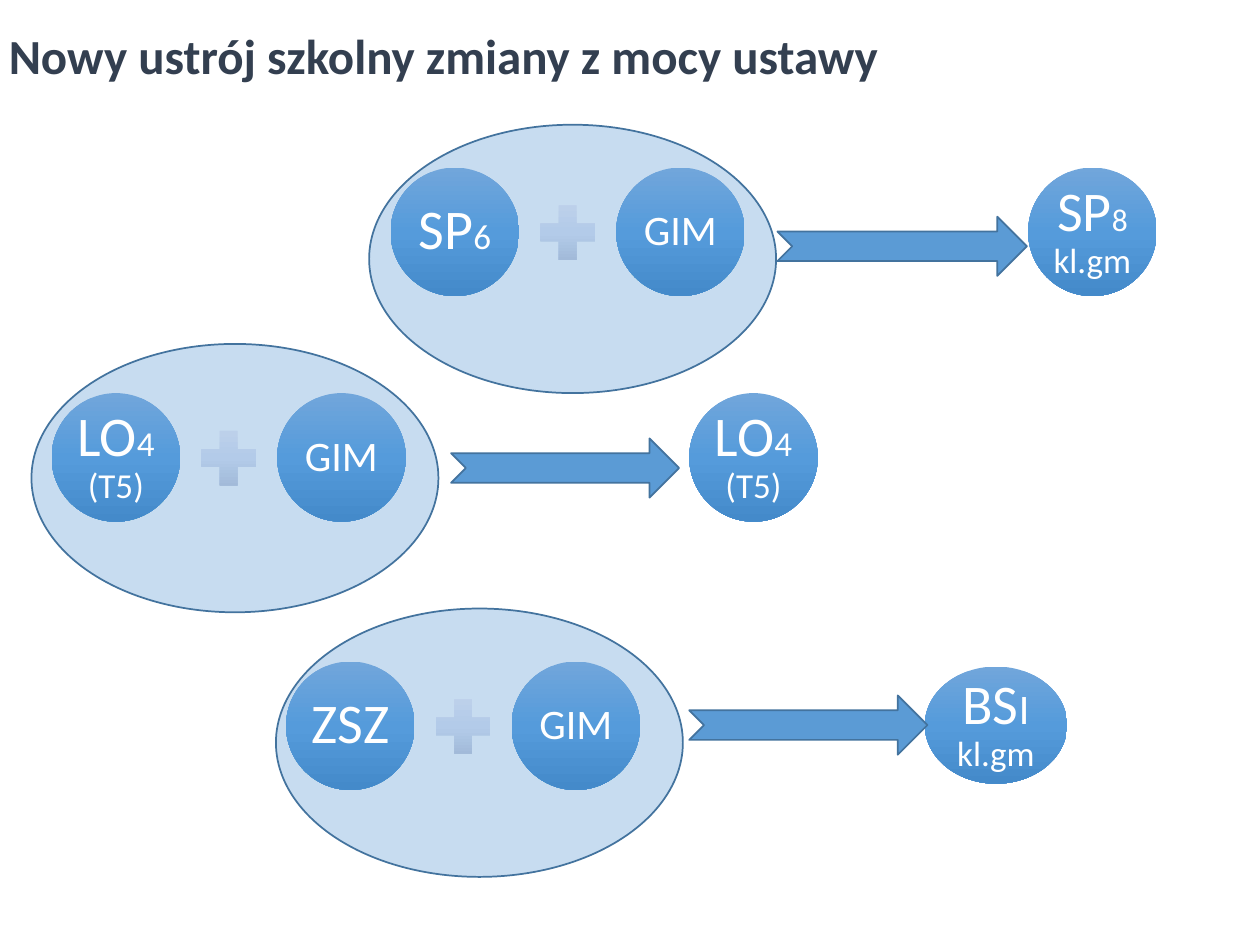
from typing import NamedTuple

from lxml.etree import SubElement
from pptx import Presentation
from pptx.dml.color import RGBColor
from pptx.enum.shapes import MSO_SHAPE as Kind
from pptx.enum.text import MSO_ANCHOR as Anchor, PP_ALIGN as Align
from pptx.oxml import parse_xml
from pptx.oxml.ns import nsdecls, qn
from pptx.util import Inches, Pt

FONT = "Calibri"
BLUE, EDGE, WHITE, NAVY = "5B9BD5", "43739E", "FFFFFF", "333F50"
BALL = ("71A6DB", "559BDB", "448ACA")
PALE = ("C0D2EB", "B3CBE9", "9BB4D3")
SIDE = 1.02  # diameter of a school circle


class Box(NamedTuple):
    x: float
    y: float
    w: float
    h: float


class Run(NamedTuple):
    text: str
    size: int


class Merger(NamedTuple):
    ring: Box
    school: Box
    name: list[Run]
    arrow: Box
    goal: Box
    result: list[Run]


def color(code: str) -> RGBColor:
    return RGBColor.from_string(code)


def add_shape(kind: Kind, box: Box):
    shape = slide.shapes.add_shape(kind, *map(Inches, box))
    shape.shadow.inherit = False
    return shape


def add_solid(kind: Kind, box: Box, alpha: int = 100) -> None:
    shape = add_shape(kind, box)
    shape.fill.solid()
    shape.fill.fore_color.rgb = color(BLUE)
    if alpha < 100:
        tint = shape.fill._xPr.find(qn("a:solidFill"))[0]
        SubElement(tint, qn("a:alpha"), val=str(alpha * 1000))
    shape.line.color.rgb = color(EDGE)
    shape.line.width = Pt(1)


def add_shaded(kind: Kind, box: Box, shades: tuple[str, str, str]):
    """Add a borderless shape that is shaded from top to bottom."""
    shape = add_shape(kind, box)
    stops = "".join(
        f'<a:gs pos="{i * 50000}"><a:srgbClr val="{code}"/></a:gs>'
        for i, code in enumerate(shades)
    )
    shape._element.spPr.find(qn("a:prstGeom")).addnext(parse_xml(
        f'<a:gradFill {nsdecls("a")}><a:gsLst>{stops}</a:gsLst>'
        '<a:lin ang="5400000" scaled="0"/></a:gradFill>'
    ))
    shape.line.fill.background()
    return shape


def set_frame(frame, side: float, top: float) -> None:
    frame.word_wrap = True
    frame.vertical_anchor = Anchor.MIDDLE
    frame.margin_left = frame.margin_right = Inches(side)
    frame.margin_top = frame.margin_bottom = Inches(top)


def add_ball(box: Box, runs: list[Run]) -> None:
    frame = add_shaded(Kind.OVAL, box, BALL).text_frame
    set_frame(frame, 0, 0)
    para = frame.paragraphs[0]
    para.alignment = Align.CENTER
    para.line_spacing = 0.9
    para.font.name = FONT
    para.font.color.rgb = color(WHITE)
    for text, size in runs:
        # A trailing newline marks a line break
        run = para.add_run()
        run.text = text.rstrip("\n")
        run.font.size = Pt(size)
        run.font.name = FONT
        run.font.color.rgb = color(WHITE)
        if text.endswith("\n"):
            para.add_line_break()


def add_merger(item: Merger) -> None:
    x, y, w, h = item.school
    add_solid(Kind.OVAL, item.ring, alpha=34)
    add_ball(item.school, item.name)
    add_shaded(Kind.MATH_PLUS, Box(x + 1.11, y + 0.22, 0.59, 0.59), PALE)
    add_ball(Box(x + 1.79, y, w, h), [Run("GIM", 24)])
    add_ball(item.goal, item.result)
    add_solid(Kind.NOTCHED_RIGHT_ARROW, item.arrow)


def add_title(text: str) -> None:
    frame = slide.shapes.add_textbox(*map(Inches, (0, -0.03, 10, 0.99))).text_frame
    set_frame(frame, 0.07, 0.03)
    para = frame.paragraphs[0]
    para.text = text
    para.line_spacing = 0.9
    para.font.name = FONT
    para.font.size = Pt(28)
    para.font.bold = True
    para.font.color.rgb = color(NAVY)


LYCEUM = [Run("LO", 32), Run("4 (T5)", 20)]
MERGERS = [
    # Vocational school
    Merger(
        Box(2.19, 4.83, 3.23, 2.13), Box(2.27, 5.25, SIDE, SIDE), [Run("ZSZ", 32)],
        Box(5.47, 5.52, 1.89, 0.47), Box(7.34, 5.29, 1.13, 0.93),
        [Run("BS", 32), Run("I\n", 24), Run("kl.gm", 20)],
    ),
    # Secondary school
    Merger(
        Box(0.25, 2.73, 3.23, 2.13), Box(0.41, 3.12, SIDE, SIDE), LYCEUM,
        Box(3.58, 3.48, 1.81, 0.47), Box(5.47, 3.12, SIDE, SIDE), LYCEUM,
    ),
    # Primary school
    Merger(
        Box(2.93, 0.99, 3.23, 2.13), Box(3.1, 1.33, SIDE, SIDE),
        [Run("SP", 32), Run("6", 20)],
        Box(6.17, 1.72, 1.98, 0.47), Box(8.16, 1.33, SIDE, SIDE),
        [Run("SP", 32), Run("8", 18), Run(" ", 32), Run("kl.gm", 20)],
    ),
]

deck = Presentation()
deck.slide_width, deck.slide_height = Inches(10), Inches(7.5)
slide = deck.slides.add_slide(deck.slide_layouts[6])

add_title("Nowy ustrój szkolny zmiany z mocy ustawy")
for merger in MERGERS:
    add_merger(merger)

deck.save("out.pptx")
